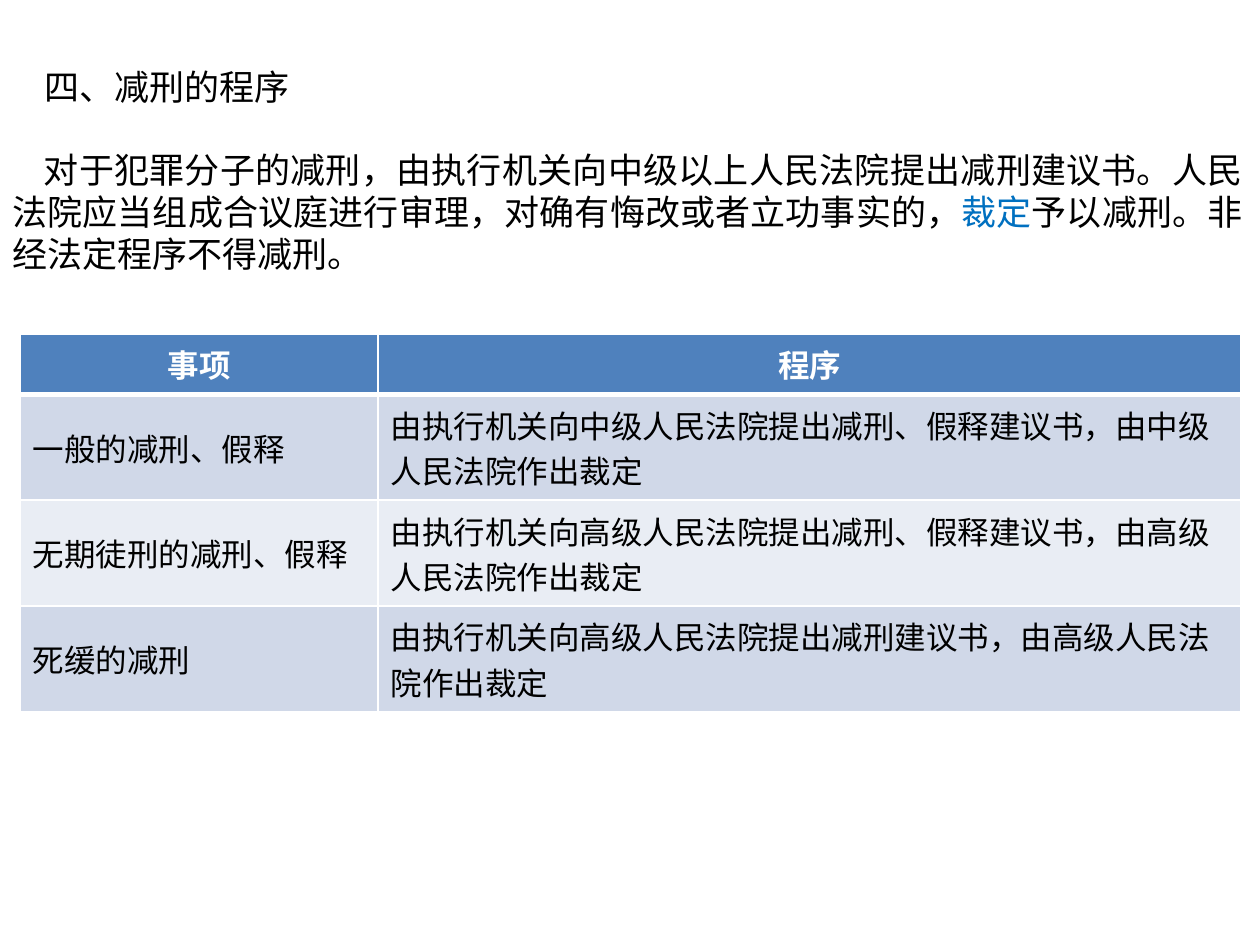
"""Build a slide on the procedure for commuting sentences, with a table of cases."""
from lxml import etree
from pptx import Presentation
from pptx.dml.color import RGBColor
from pptx.enum import text
from pptx.oxml import ns
from pptx.util import Inches, Pt

COLORS = {"black": "000000", "white": "FFFFFF", "accent": "0070C0",
          "header": "4F81BD", "odd": "D0D8E8", "even": "E9EDF4"}
CJK_FONT = "Noto Sans CJK SC"
TITLE = [("四、减刑的程序", "black")]
BODY = [
    ("对于犯罪分子的减刑，由执行机关向中级以上人民法院提出减刑建议书。"
     "人民法院应当组成合议庭进行审理，对确有悔改或者立功事实的，", "black"),
    ("裁定", "accent"),
    ("予以减刑。非经法定程序不得减刑。", "black"),
]
ROWS = [
    ("事项", "程序"),
    ("一般的减刑、假释", "由执行机关向中级人民法院提出减刑、假释建议书，由中级人民法院作出裁定"),
    ("无期徒刑的减刑、假释", "由执行机关向高级人民法院提出减刑、假释建议书，由高级人民法院作出裁定"),
    ("死缓的减刑", "由执行机关向高级人民法院提出减刑建议书，由高级人民法院作出裁定"),
]
COLUMN_WIDTHS = (2.84, 6.85)
ROW_HEIGHTS = (0.48, 0.84, 0.84, 0.84)


def style_span(span, size, color, latin, bold=False):
    span.font.size, span.font.bold, span.font.name = Pt(size), bold, latin
    span.font.color.rgb = RGBColor.from_string(COLORS[color])
    east_asian = etree.Element(ns.qn("a:ea"), typeface=CJK_FONT)
    span.font._element.find(ns.qn("a:latin")).addnext(east_asian)


def fill_box(box, top, height, spans):
    box.left, box.top = Inches(0), Inches(top)
    box.width, box.height = Inches(9.96), Inches(height)
    frame = box.text_frame
    frame.word_wrap = True
    frame.auto_size = text.MSO_AUTO_SIZE.NONE
    frame.vertical_anchor = text.MSO_ANCHOR.TOP
    para = frame.paragraphs[0]
    para.alignment = text.PP_ALIGN.JUSTIFY
    para.line_spacing = Pt(24)
    para._p.get_or_add_pPr().set("indent", str(Inches(0.25)))
    for wording, color in spans:
        span = para.add_run()
        span.text = wording
        style_span(span, 20, color, CJK_FONT)


def add_borders(cell, bottom):
    properties = cell._tc.get_or_add_tcPr()
    widths = {"lnL": 1, "lnR": 1, "lnT": 1, "lnB": bottom}
    for position, (side, width) in enumerate(widths.items()):
        line = etree.Element(ns.qn(f"a:{side}"), w=str(Pt(width)))
        fill = etree.SubElement(line, ns.qn("a:solidFill"))
        etree.SubElement(fill, ns.qn("a:srgbClr"), val=COLORS["white"])
        properties.insert(position, line)


def fill_cell(cell, wording, row):
    header = row == 0
    fill = "header" if header else "odd" if row % 2 else "even"
    cell.text = wording
    cell.vertical_anchor = text.MSO_ANCHOR.MIDDLE
    cell.fill.solid()
    cell.fill.fore_color.rgb = RGBColor.from_string(COLORS[fill])
    para = cell.text_frame.paragraphs[0]
    para.alignment = text.PP_ALIGN.CENTER if header else text.PP_ALIGN.LEFT
    style_span(para.runs[0], 18, "white" if header else "black", "Calibri", header)
    add_borders(cell, 3 if row == 0 else 1)
    if row == 1:
        cell._tc.tcPr.find(ns.qn("a:lnT")).set("w", str(Pt(3)))


def add_case_table(page):
    table = page.shapes.add_table(
        len(ROWS), len(COLUMN_WIDTHS), Inches(0.16), Inches(2.65),
        Inches(sum(COLUMN_WIDTHS)), Inches(sum(ROW_HEIGHTS))).table
    for column, width in zip(table.columns, COLUMN_WIDTHS):
        column.width = Inches(width)
    for row, (height, wordings) in enumerate(zip(ROW_HEIGHTS, ROWS)):
        table.rows[row].height = Inches(height)
        for column, wording in enumerate(wordings):
            fill_cell(table.cell(row, column), wording, row)


def main():
    deck = Presentation()
    deck.slide_width, deck.slide_height = Inches(10), Inches(7.5)
    page = deck.slides.add_slide(deck.slide_layouts[5])
    fill_box(page.shapes.title, 0.47, 0.43, TITLE)
    body = page.shapes.add_textbox(0, 0, 0, 0)
    fill_box(body, 1.13, 1.1, BODY)
    add_case_table(page)
    deck.save("out.pptx")


if __name__ == "__main__":
    main()
